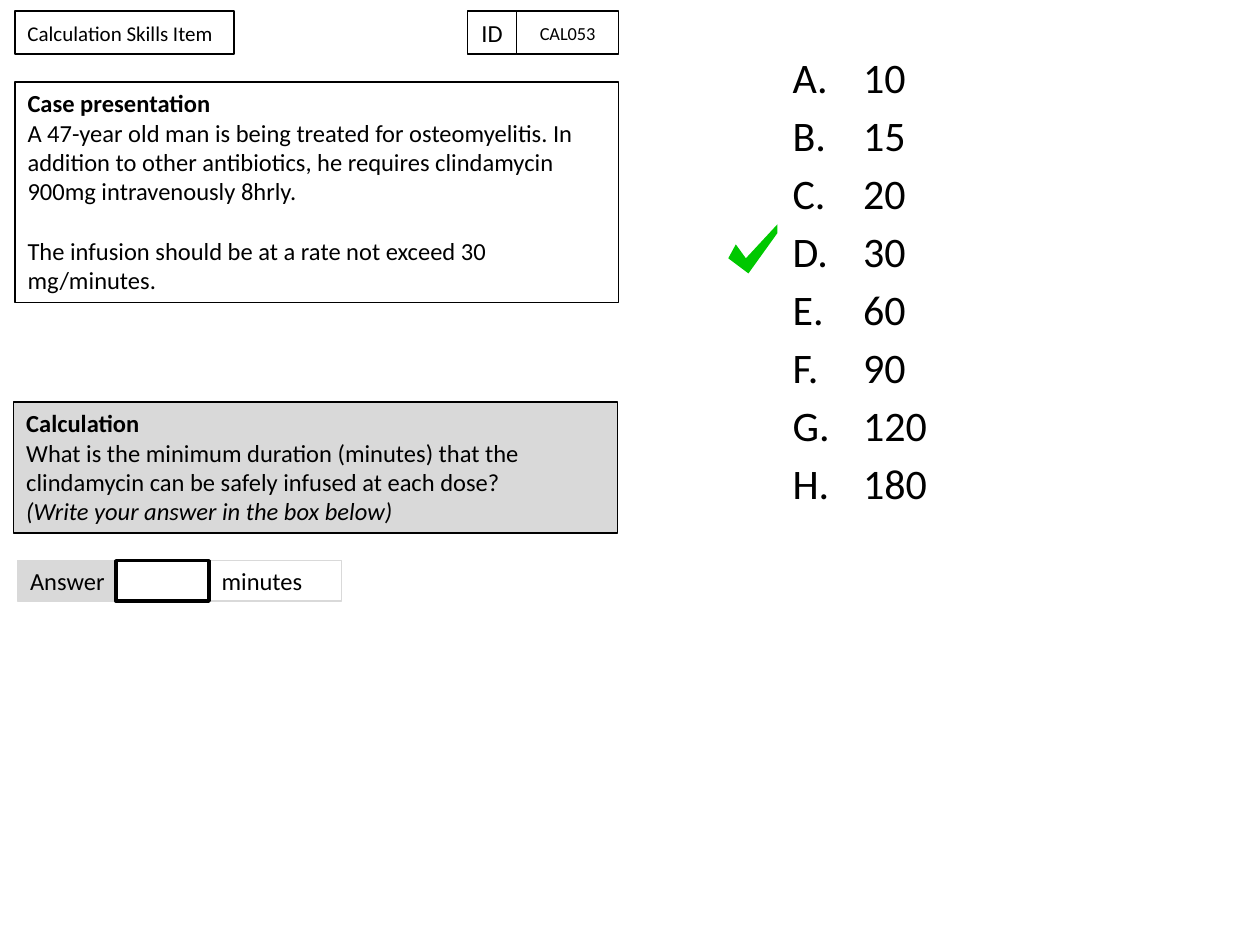
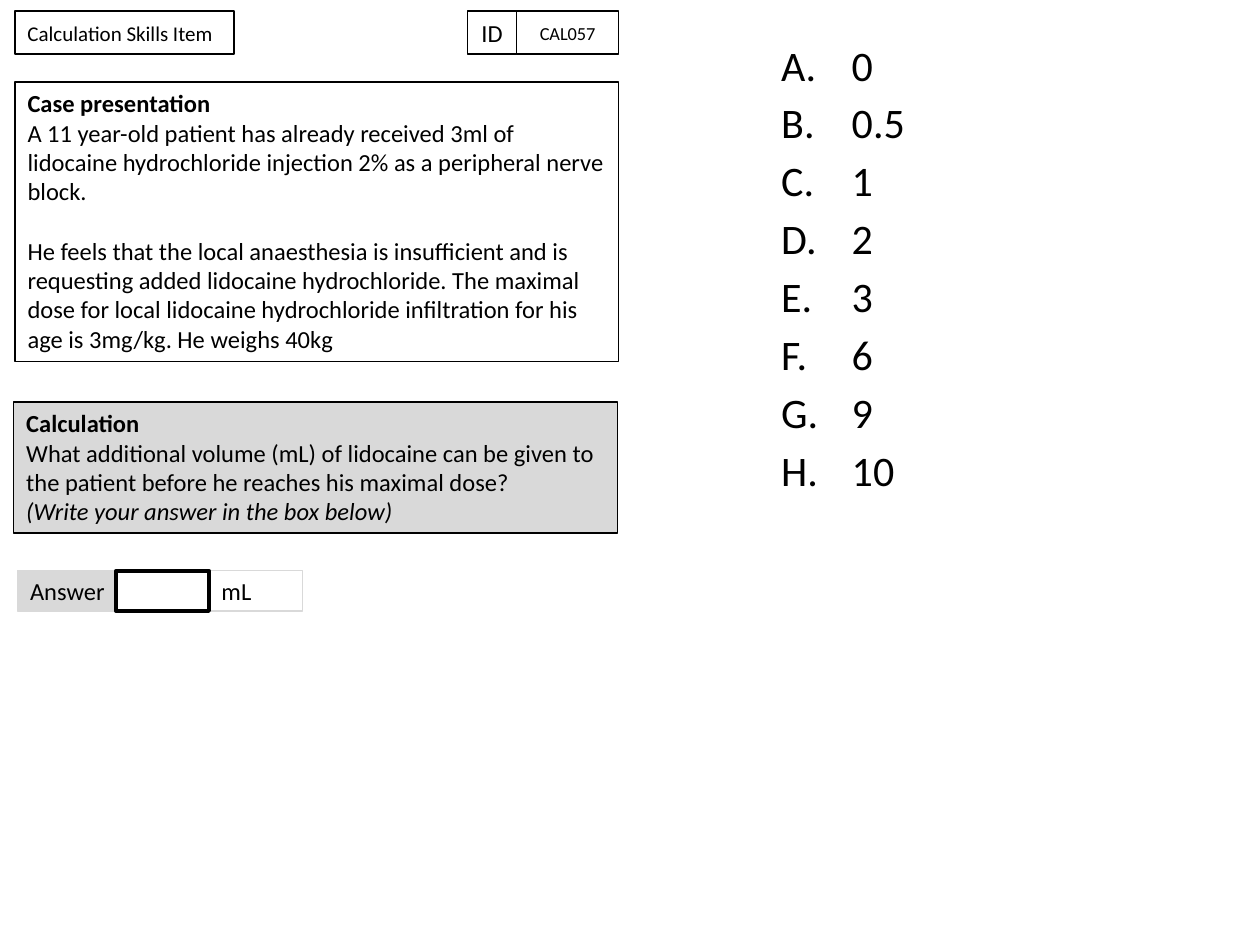
from collections import namedtuple

from lxml import etree
from pptx import Presentation
from pptx.dml.color import RGBColor
from pptx.enum.shapes import MSO_SHAPE as Preset
from pptx.enum.text import MSO_ANCHOR as Anchor, PP_ALIGN as Align
from pptx.oxml.ns import qn
from pptx.util import Inches, Pt

FONT = "Calibri"
BLACK, WHITE, GREY, GREEN = "000000", "FFFFFF", "D9D9D9", "00C800"
TEXT_SIZE = 14
BLANK_LINE = 17
CARD_WIDTH = 4.79

Box = namedtuple("Box", "left top width height")
Item = namedtuple("Item", "code case case_height question unit unit_width "
                          "answer_top options options_at correct")

ITEMS = [
    Item("CAL053",
         ["A 47-year old man is being treated for osteomyelitis. In addition to "
          "other antibiotics, he requires clindamycin 900mg intravenously 8hrly.",
          "The infusion should be at a rate not exceed 30 mg/minutes."],
         1.75,
         "What is the minimum duration (minutes) that the clindamycin can be "
         "safely infused at each dose?",
         "minutes", 1.05, 4.45,
         ["10", "15", "20", "30", "60", "90", "120", "180"], (6.19, 0.36), True),
    Item("CAL057",
         ["A 11 year-old patient has already received 3ml of lidocaine "
          "hydrochloride injection 2% as a peripheral nerve block.",
          "He feels that the local anaesthesia is insufficient and is requesting "
          "added lidocaine hydrochloride. The maximal dose for local lidocaine "
          "hydrochloride infiltration for his age is 3mg/kg. He weighs 40kg"],
         2.22,
         "What additional volume (mL) of lidocaine can be given to the patient "
         "before he reaches his maximal dose?",
         "mL", 0.74, 4.53,
         ["0", "0.5", "1", "2", "3", "6", "9", "10"], (6.1, 0.26), False),
]


def color(value):
    return RGBColor.from_string(value)


def style(para, size=TEXT_SIZE, bold=False, italic=False):
    for span in para.runs:
        font = span.font
        font.name, font.size = FONT, Pt(size)
        font.bold, font.italic = bold, italic
        font.color.rgb = color(BLACK)


def add_box(page, box, lines=(), fill=None, line=BLACK, weight=0.75,
            size=TEXT_SIZE, align=Align.LEFT, anchor=Anchor.MIDDLE):
    """Add a bordered rectangle with one paragraph for each line of text."""
    shape = page.shapes.add_shape(Preset.RECTANGLE, *map(Inches, box))
    shape.shadow.inherit = False
    if fill:
        shape.fill.solid()
        shape.fill.fore_color.rgb = color(fill)
    else:
        shape.fill.background()
    shape.line.color.rgb = color(line)
    shape.line.width = Pt(weight)
    frame = shape.text_frame
    frame.word_wrap = True
    frame.vertical_anchor = anchor
    frame.text = "\n".join(lines)
    for para in frame.paragraphs:
        para.alignment = align
        style(para, size)
    return frame.paragraphs


# Header: item type on the left, ID and code on the right
def add_header(page, box, code):
    left, top, width, height = box
    code_width, id_width = 0.81, 0.39
    code_left = left + width - code_width
    add_box(page, (left, top, 1.74, height), ["Calculation Skills Item"],
            WHITE, weight=1, size=12)
    add_box(page, (code_left, top, code_width, height), [code],
            WHITE, weight=1, size=10.5, align=Align.CENTER)
    add_box(page, (code_left - id_width, top, id_width, height), ["ID"],
            weight=1, align=Align.CENTER)


# Case presentation: bold heading, then two blocks of text
def add_case(page, box, texts):
    paras = add_box(page, box, ["Case presentation", *texts], anchor=Anchor.TOP)
    style(paras[0], bold=True)
    paras[-1].space_before = Pt(BLANK_LINE)


# Calculation: bold heading, question and italic instruction
def add_question(page, box, question):
    paras = add_box(page, box, ["Calculation", question,
                                "(Write your answer in the box below)"],
                    GREY, anchor=Anchor.TOP)
    style(paras[0], bold=True)
    style(paras[-1], italic=True)


# Answer row: label, entry box and unit
def add_answer(page, box, unit):
    left, top, width, height = box
    entry_left, entry_width = left + 0.78, 0.74
    unit_left = entry_left + entry_width
    add_box(page, (left, top, 0.87, height), ["Answer"], GREY, GREY)
    add_box(page, (unit_left, top, left + width - unit_left, height), [unit],
            line=GREY)
    add_box(page, (entry_left, top, entry_width, height), fill=WHITE, weight=2)


# Options: lettered list in the body placeholder
def add_options(page, box, options):
    body = page.placeholders[1]
    body.left, body.top, body.width, body.height = map(Inches, box)
    body.text_frame.text = "\n".join(options)
    for para in body.text_frame.paragraphs:
        style(para, 24)
        para.space_before = Pt(4.3)
        props = para._p.get_or_add_pPr()
        props.set("marL", str(Inches(0.56)))
        props.set("indent", str(-Inches(0.56)))
        etree.SubElement(props, qn("a:buFont"), typeface=FONT)
        etree.SubElement(props, qn("a:buAutoNum"), type="alphaUcPeriod")


# Tick beside the correct option
def add_tick(page, left, top):
    outline = [(0.06, 0.16), (0, 0.27), (0.16, 0.39),
               (0.39, 0.07), (0.39, 0), (0.14, 0.27)]
    points = [(Inches(left + x), Inches(top + y)) for x, y in outline]
    builder = page.shapes.build_freeform(*points[0])
    builder.add_line_segments(points[1:], close=True)
    tick = builder.convert_to_shape()
    tick.shadow.inherit = False
    tick.fill.solid()
    tick.fill.fore_color.rgb = color(GREEN)
    tick.line.fill.background()


def add_item_page(deck, item):
    page = deck.slides.add_slide(deck.slide_layouts[1])
    title = page.shapes.title.element
    title.getparent().remove(title)
    options_box = Box(*item.options_at, 3.31, 6.4)
    add_options(page, options_box, item.options)
    add_header(page, Box(0.12, 0.09, CARD_WIDTH, 0.34), item.code)
    add_case(page, Box(0.12, 0.65, CARD_WIDTH, item.case_height), item.case)
    add_question(page, Box(0.11, 3.19, CARD_WIDTH, 1.04), item.question)
    add_answer(page, Box(0.14, item.answer_top, 1.52 + item.unit_width, 0.32),
               item.unit)
    if item.correct:
        add_tick(page, options_box.left - 0.41, options_box.top + 1.42)


def main():
    deck = Presentation()
    deck.slide_width, deck.slide_height = Inches(10), Inches(7.5)
    for item in ITEMS:
        add_item_page(deck, item)
    deck.save("out.pptx")


if __name__ == "__main__":
    main()
